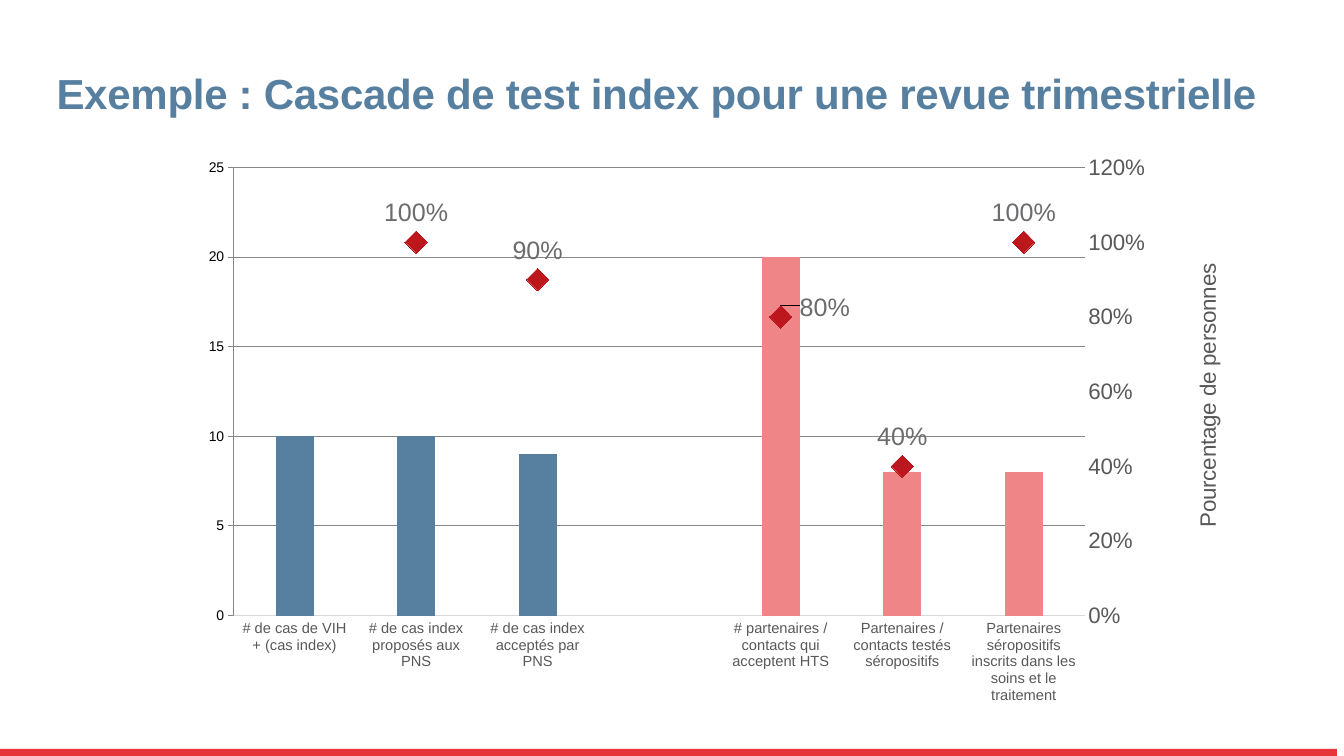
import pptx
import pptx.util
import pptx.oxml
import pptx.oxml.ns
import pptx.chart.axis
import pptx.chart.data
import pptx.dml.color
import pptx.enum.chart
import pptx.enum.shapes
import pptx.enum.text

Cm, Pt = pptx.util.Cm, pptx.util.Pt
qn, parse = pptx.oxml.ns.qn, pptx.oxml.parse_xml
enum = pptx.enum.chart
NS = 'xmlns:c="http://schemas.openxmlformats.org/drawingml/2006/chart"'

TITLE = "Exemple : Cascade de test index pour une revue trimestrielle"
LEFT, RIGHT = "Nombre de personnes", "Pourcentage de personnes"
ROWS = [
    ("# de cas de VIH + (cas index)", 10, None, "577F9F"),
    ("# de cas index proposés aux PNS", 10, 1, "577F9F"),
    ("# de cas index acceptés par PNS", 9, 0.9, "577F9F"),
    ("", None, None, None),
    ("# partenaires / contacts qui acceptent HTS", 20, 0.8, "F08588"),
    ("Partenaires / contacts testés séropositifs", 8, 0.4, "F08588"),
    ("Partenaires séropositifs inscrits dans les soins et le traitement", 8, 1, "F08588"),
]
MOVED = 4
BOX = {
    "title": (1.17, 0.91, 31.55, 2.21),
    "chart": (3, 3.71, 27.91, 16.51),
    "strip": (-0.18, 18.87, 33.86, 0.2),
}
GREY, PALE, RED = "595959", "D9D9D9", "BC171D"
LABEL = {"size": Pt(18), "name": "Arial", "bold": False}
AXIS = {"size": Pt(16), "name": "Arial", "bold": False}
SMALL = {"size": Pt(10.5), "name": "Arial", "bold": False}
HEAD = {"size": Pt(30), "name": "Arial", "bold": True}


def rgb(code):
    return pptx.dml.color.RGBColor.from_string(code)


def put(thing, vals):
    for key, val in vals.items():
        setattr(thing, key, val)


def style(font, vals, code):
    put(font, vals)
    font.color.rgb = rgb(code)


def paint(form, code):
    form.fill.solid()
    form.fill.fore_color.rgb = rgb(code)
    form.line.fill.background()


def place(name):
    return [Cm(n) for n in BOX[name]]


def layout(x, y, w=None, h=None):
    modes = '<c:xMode val="edge"/><c:yMode val="edge"/>' if x >= 0 else ""
    size = f'<c:w val="{w}"/><c:h val="{h}"/>' if w else ""
    inner = '<c:layoutTarget val="inner"/>' if w else ""
    return parse(f'<c:layout {NS}><c:manualLayout>{inner}{modes}<c:x val="{x}"/>'
                 f'<c:y val="{y}"/>{size}</c:manualLayout></c:layout>')


def set_axis(axis, text, x, y, top, step, form):
    put(axis, {"minimum_scale": 0, "maximum_scale": top, "major_unit": step})
    put(axis.tick_labels, {"number_format": form, "number_format_is_linked": False})
    style(axis.tick_labels.font, AXIS, GREY)
    axis.format.line.fill.background()
    frame = axis.axis_title.text_frame
    frame.text = text
    style(frame.paragraphs[0].runs[0].font, AXIS, GREY)
    body = frame._txBody.find(qn("a:bodyPr"))
    body.set("rot", "-5400000")
    body.set("vert", "horz")
    head = axis.axis_title._element
    for old in head.findall(qn("c:layout")):
        head.remove(old)
    head.find(qn("c:tx")).addnext(layout(x, y))


def add_line(chart):
    area = chart._chartSpace.chart.plotArea
    bars = area.find(qn("c:barChart"))
    ser = bars.findall(qn("c:ser"))[1]
    for old in ser.findall(qn("c:invertIfNegative")):
        ser.remove(old)
    line = parse(f'<c:lineChart {NS}><c:grouping val="standard"/><c:varyColors val="0"/>'
                 '<c:marker val="1"/><c:axId val="501"/><c:axId val="502"/></c:lineChart>')
    line.find(qn("c:varyColors")).addnext(ser)
    bars.addnext(line)
    scale = '<c:scaling><c:orientation val="minMax"/></c:scaling>'
    cat = parse(f'<c:catAx {NS}><c:axId val="501"/>{scale}<c:delete val="1"/>'
                '<c:axPos val="b"/><c:crossAx val="502"/><c:crosses val="autoZero"/></c:catAx>')
    val = parse(f'<c:valAx {NS}><c:axId val="502"/>{scale}<c:delete val="0"/>'
                '<c:axPos val="r"/><c:majorTickMark val="out"/><c:minorTickMark val="none"/>'
                '<c:tickLblPos val="nextTo"/><c:crossAx val="501"/><c:crosses val="max"/>'
                '<c:crossBetween val="between"/></c:valAx>')
    last = area.findall(qn("c:valAx"))[-1]
    last.addnext(cat)
    cat.addnext(val)
    return pptx.chart.axis.ValueAxis(val)


def set_rate(rate):
    rate.smooth = False
    rate.format.line.fill.background()
    put(rate.marker, {"style": enum.XL_MARKER_STYLE.DIAMOND, "size": 16})
    paint(rate.marker.format, RED)
    tags = rate.data_labels
    above = enum.XL_LABEL_POSITION.ABOVE
    put(tags, {"show_value": True, "number_format": "0%",
               "number_format_is_linked": False, "position": above})
    style(tags.font, LABEL, "6C6C6F")
    tag = rate.points[MOVED].data_label
    style(tag.font, LABEL, "6C6C6F")
    tag.position = above
    idx = tags._element.find(qn("c:dLbl")).find(qn("c:idx"))
    idx.addnext(parse(f'<c:numFmt {NS} formatCode="0%" sourceLinked="0"/>'))
    idx.addnext(parse(f'<c:layout {NS}><c:manualLayout><c:x val="0.04"/>'
                      '<c:y val="0.03"/></c:manualLayout></c:layout>'))


def add_chart(slide):
    data = pptx.chart.data.CategoryChartData()
    data.categories = [row[0] for row in ROWS]
    data.add_series("Series 1", [row[1] for row in ROWS])
    data.add_series("Series 2", [row[2] for row in ROWS], "0%")
    kind = enum.XL_CHART_TYPE.COLUMN_CLUSTERED
    chart = slide.shapes.add_chart(kind, *place("chart"), data).chart
    put(chart, {"has_legend": False, "has_title": False})
    style(chart.font, {"size": Pt(10), "name": "Arial"}, "000000")
    right = add_line(chart)
    bars, line = chart.plots
    put(bars, {"gap_width": 219, "overlap": -27, "vary_by_categories": False})
    people = bars.series[0]
    people.invert_if_negative = False
    paint(people.format, ROWS[0][3])
    for num, row in enumerate(ROWS):
        if row[3] and row[3] != ROWS[0][3]:
            paint(people.points[num].format, row[3])
    set_rate(line.series[0])
    cat, left = chart.category_axis, chart.value_axis
    none = enum.XL_TICK_MARK.NONE
    for axis in (cat, left):
        put(axis, {"major_tick_mark": none, "minor_tick_mark": none})
    style(cat.tick_labels.font, SMALL, GREY)
    left.has_major_gridlines = True
    for edge in (cat.format.line, left.major_gridlines.format.line):
        edge.width = Pt(0.75)
        edge.color.rgb = rgb(PALE)
    set_axis(left, LEFT, 0.01, 0.2, 25, 5, "General")
    set_axis(right, RIGHT, 0.97, 0.17, 1.2, 0.2, "0%")
    area = chart._chartSpace.chart.plotArea
    for old in area.findall(qn("c:layout")):
        area.remove(old)
    area.insert(0, layout(0.104, 0.031, 0.771, 0.684))


def add_title(slide):
    title = slide.shapes.title
    put(title, dict(zip(("left", "top", "width", "height"), place("title"))))
    frame = title.text_frame
    frame.text = TITLE
    put(frame, {"word_wrap": True, "auto_size": pptx.enum.text.MSO_AUTO_SIZE.NONE,
                "vertical_anchor": pptx.enum.text.MSO_ANCHOR.BOTTOM})
    para = frame.paragraphs[0]
    put(para, {"alignment": pptx.enum.text.PP_ALIGN.LEFT, "line_spacing": 0.9})
    run = para.runs[0]
    style(run.font, HEAD, "577F9F")
    run._r.get_or_add_rPr().set("spc", "-20")


def add_strip(slide):
    kind = pptx.enum.shapes.MSO_SHAPE.RECTANGLE
    strip = slide.shapes.add_shape(kind, *place("strip"))
    strip.shadow.inherit = False
    paint(strip, "E73439")


def main():
    deck = pptx.Presentation()
    put(deck, {"slide_width": Cm(33.86), "slide_height": Cm(19.05)})
    slide = deck.slides.add_slide(deck.slide_layouts[5])
    add_title(slide)
    add_chart(slide)
    add_strip(slide)
    deck.save("out.pptx")


if __name__ == "__main__":
    main()
